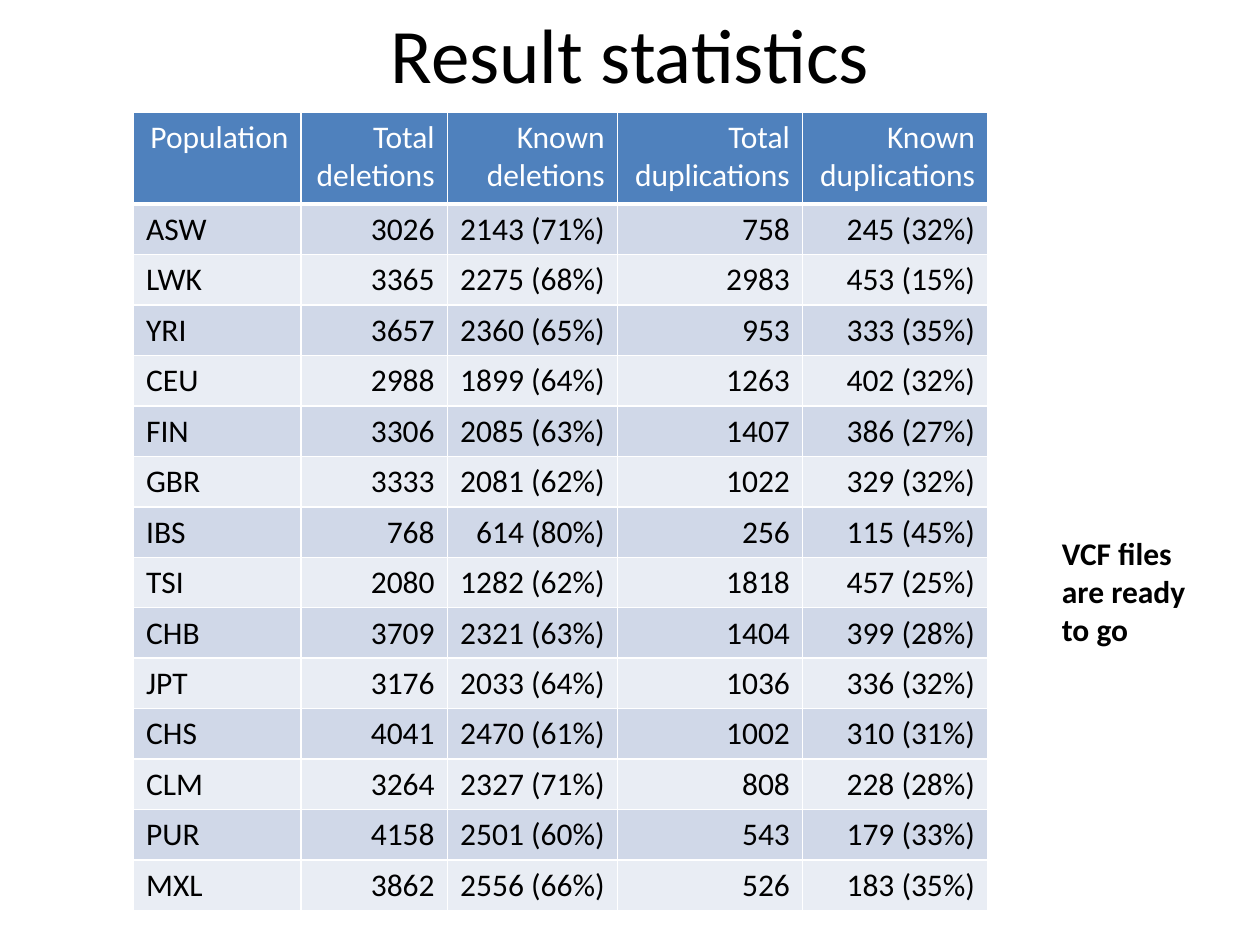
from lxml.etree import SubElement
from pptx import Presentation
from pptx.dml.color import RGBColor
from pptx.enum.text import MSO_ANCHOR, PP_ALIGN
from pptx.oxml.ns import qn
from pptx.util import Inches, Pt

COLORS = {
    "text": "000000",
    "header": "4F81BD",
    "band_dark": "D0D8E8",
    "band_light": "E9EDF4",
    "white": "FFFFFF",
}
TITLE_FONT = {"name": "Calibri", "size": Pt(44), "bold": False}
BODY_FONT = {"name": "Calibri", "size": Pt(18), "bold": False}
NOTE_FONT = {**BODY_FONT, "bold": True}

COLUMN_WIDTHS = [1.33, 1.16, 1.35, 1.47, 1.47]
HEADER_HEIGHT, ROW_HEIGHT = 0.73, 0.4
HEADINGS = [
    "Population",
    "Total\ndeletions",
    "Known\ndeletions",
    "Total\nduplications",
    "Known\nduplications",
]
POPULATIONS = [
    ("ASW", "3026", "2143 (71%)", "758", "245 (32%)"),
    ("LWK", "3365", "2275 (68%)", "2983", "453 (15%)"),
    ("YRI", "3657", "2360 (65%)", "953", "333 (35%)"),
    ("CEU", "2988", "1899 (64%)", "1263", "402 (32%)"),
    ("FIN", "3306", "2085 (63%)", "1407", "386 (27%)"),
    ("GBR", "3333", "2081 (62%)", "1022", "329 (32%)"),
    ("IBS", "768", "614 (80%)", "256", "115 (45%)"),
    ("TSI", "2080", "1282 (62%)", "1818", "457 (25%)"),
    ("CHB", "3709", "2321 (63%)", "1404", "399 (28%)"),
    ("JPT", "3176", "2033 (64%)", "1036", "336 (32%)"),
    ("CHS", "4041", "2470 (61%)", "1002", "310 (31%)"),
    ("CLM", "3264", "2327 (71%)", "808", "228 (28%)"),
    ("PUR", "4158", "2501 (60%)", "543", "179 (33%)"),
    ("MXL", "3862", "2556 (66%)", "526", "183 (35%)"),
]


def write_text(frame, wording, font_format, color, align):
    """Fill a text frame, one paragraph per line of wording."""
    frame.text = wording
    for paragraph in frame.paragraphs:
        paragraph.alignment = align
        for run in paragraph.runs:
            for attribute, value in font_format.items():
                setattr(run.font, attribute, value)
            run.font.color.rgb = RGBColor.from_string(COLORS[color])


def add_borders(cell, bottom_width):
    """Draw white lines on the four sides of a cell."""
    properties = cell._tc.get_or_add_tcPr()
    widths = {"a:lnL": 1, "a:lnR": 1, "a:lnT": 1, "a:lnB": bottom_width}
    for side, width in widths.items():
        line = SubElement(properties, qn(side), w=str(Pt(width)))
        fill = SubElement(line, qn("a:solidFill"))
        SubElement(fill, qn("a:srgbClr"), val=COLORS["white"])


def add_label(slide, box, wording, font_format, align, frame_format):
    """Place a black text box in the given box."""
    frame = slide.shapes.add_textbox(*map(Inches, box)).text_frame
    for attribute, value in frame_format.items():
        setattr(frame, attribute, value)
    write_text(frame, wording, font_format, "text", align)


def add_statistics(slide, left, top):
    """Place the banded table of deletions and duplications."""
    records = [HEADINGS, *POPULATIONS]
    heights = [HEADER_HEIGHT] + [ROW_HEIGHT] * len(POPULATIONS)
    box = (left, top, sum(COLUMN_WIDTHS), sum(heights))
    table = slide.shapes.add_table(
        len(records), len(HEADINGS), *map(Inches, box)
    ).table
    for column, width in zip(table.columns, COLUMN_WIDTHS):
        column.width = Inches(width)
    for index, (row, height, record) in enumerate(zip(table.rows, heights, records)):
        row.height = Inches(height)
        is_header = index == 0
        band = "header" if is_header else "band_dark" if index % 2 else "band_light"
        for position, (cell, wording) in enumerate(zip(row.cells, record)):
            is_name = position == 0 and not is_header
            add_borders(cell, 3 if is_header else 1)
            cell.fill.solid()
            cell.fill.fore_color.rgb = RGBColor.from_string(COLORS[band])
            write_text(
                cell.text_frame,
                wording,
                BODY_FONT,
                "white" if is_header else "text",
                PP_ALIGN.LEFT if is_name else PP_ALIGN.RIGHT,
            )


def main():
    """Build and save the result statistics slide."""
    presentation = Presentation()
    presentation.slide_width, presentation.slide_height = Inches(10), Inches(7.5)
    slide = presentation.slides.add_slide(presentation.slide_layouts[6])
    add_label(
        slide, (0.5, -0.21, 9, 1.25), "Result statistics", TITLE_FONT,
        PP_ALIGN.CENTER, {"word_wrap": True, "vertical_anchor": MSO_ANCHOR.MIDDLE},
    )
    add_statistics(slide, 1.06, 0.89)
    add_label(
        slide, (8.33, 4.19, 1.2, 1.01), "VCF files\nare ready\nto go", NOTE_FONT,
        PP_ALIGN.LEFT, {"word_wrap": False},
    )
    presentation.save("out.pptx")


if __name__ == "__main__":
    main()
